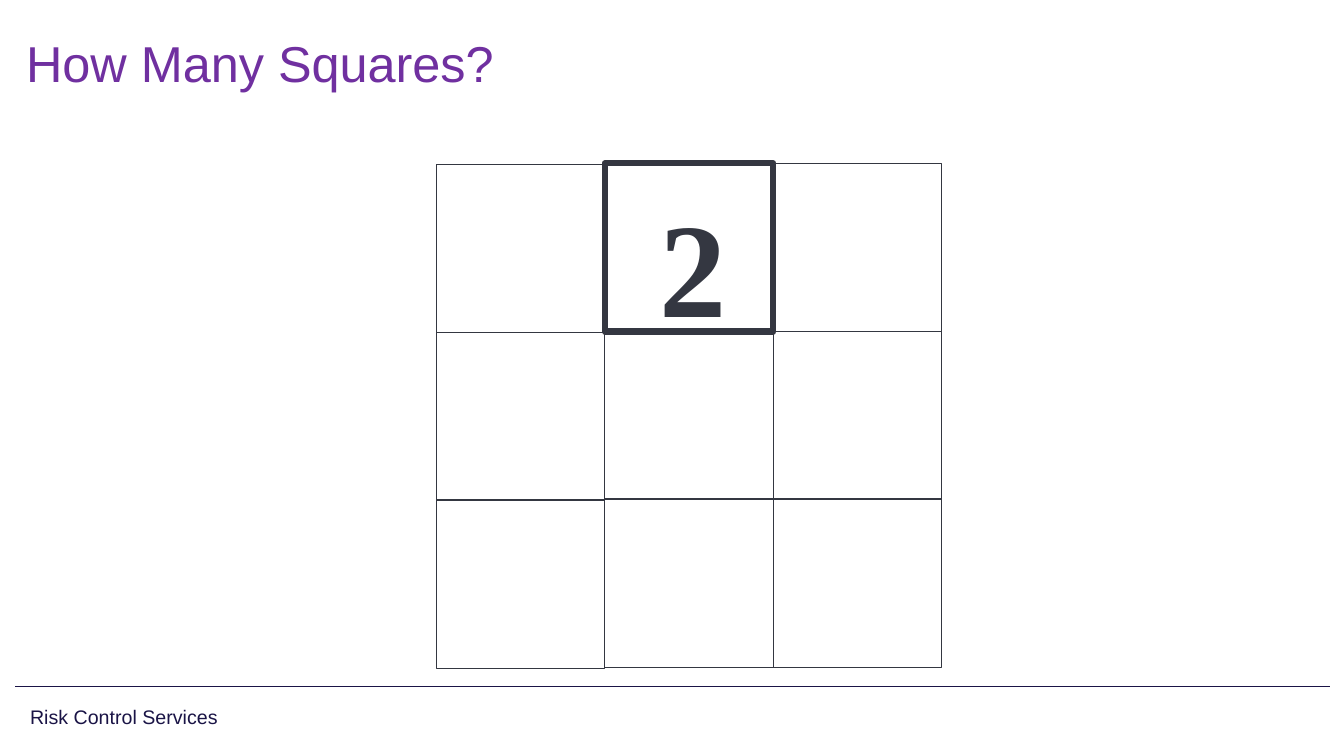
from dataclasses import dataclass, field
from typing import Any

from pptx import Presentation
from pptx.dml.color import RGBColor
from pptx.enum.shapes import MSO_CONNECTOR, MSO_SHAPE
from pptx.enum.text import MSO_ANCHOR as Anchor, PP_ALIGN as Align
from pptx.oxml.ns import qn
from pptx.slide import Slide
from pptx.util import Inches, Pt

NAVY = RGBColor(0x1A, 0x14, 0x46)
SLATE = RGBColor(0x34, 0x37, 0x41)
PURPLE = RGBColor(0x70, 0x30, 0xA0)

# Grid geometry: the first column sits slightly lower than the others
GRID_LEFT = 4.33
CELL = 1.67
ROW_STEP = 1.665
COLUMN_TOPS = (1.63, 1.62, 1.62)
HIGHLIGHTED = (0, 1)


@dataclass
class Label:
    text: str
    left: float
    top: float
    width: float
    height: float
    font: dict[str, Any]
    frame: dict[str, Any] = field(default_factory=dict)
    paragraph: dict[str, Any] = field(default_factory=dict)


LABELS = [
    Label("Risk Control Services", 0.2, 6.91, 4.37, 0.42,
          {"name": "Arial", "size": Pt(14)},
          {"vertical_anchor": Anchor.MIDDLE}, {"line_spacing": 0.9}),
    Label("2", 6.08, 1.64, 1.58, 1.7,
          {"name": "Times New Roman", "size": Pt(96), "bold": True},
          {"margin_top": Inches(0.18), "margin_bottom": 0},
          {"alignment": Align.CENTER}),
    Label("How Many Squares?", 0.16, 0.25, 11.26, 0.82,
          {"name": "Arial", "size": Pt(36)},
          {"vertical_anchor": Anchor.MIDDLE}, {"line_spacing": 0.9}),
]
LABEL_COLORS = (NAVY, SLATE, PURPLE)


def apply_format(target: Any, values: dict[str, Any]) -> None:
    for name, value in values.items():
        setattr(target, name, value)


def add_label(slide: Slide, label: Label, color: RGBColor) -> None:
    box = slide.shapes.add_textbox(Inches(label.left), Inches(label.top),
                                   Inches(label.width), Inches(label.height))
    frame = box.text_frame
    apply_format(frame, {"word_wrap": True, **label.frame})
    paragraph = frame.paragraphs[0]
    apply_format(paragraph, label.paragraph)
    run = paragraph.add_run()
    run.text = label.text
    apply_format(run.font, label.font)
    run.font.color.rgb = color


def add_cell(slide: Slide, row: int, column: int) -> None:
    shape = slide.shapes.add_shape(
        MSO_SHAPE.RECTANGLE,
        Inches(GRID_LEFT + column * CELL),
        Inches(COLUMN_TOPS[column] + row * ROW_STEP),
        Inches(CELL), Inches(CELL))
    shape.shadow.inherit = False
    shape.fill.background()
    shape.line.color.rgb = SLATE
    shape.line.width = Pt(4.5 if (row, column) == HIGHLIGHTED else 0.75)


def add_footer_rule(slide: Slide) -> None:
    rule = slide.shapes.add_connector(MSO_CONNECTOR.STRAIGHT, Inches(0.15), Inches(6.81),
                                      Inches(13.19), Inches(6.81))
    rule.line.color.rgb = NAVY
    rule.line.width = Pt(1)
    properties = rule.element.spPr
    properties.append(properties.makeelement(qn("a:effectLst"), {}))


def main() -> None:
    presentation = Presentation()
    presentation.slide_width = Inches(13.33)
    presentation.slide_height = Inches(7.5)
    slide = presentation.slides.add_slide(presentation.slide_layouts[6])

    # Footer rule and the three-by-three grid
    add_footer_rule(slide)
    for row in range(3):
        for column in range(3):
            add_cell(slide, row, column)

    # Footer, number and title
    for label, color in zip(LABELS, LABEL_COLORS):
        add_label(slide, label, color)

    presentation.save("out.pptx")


if __name__ == "__main__":
    main()
